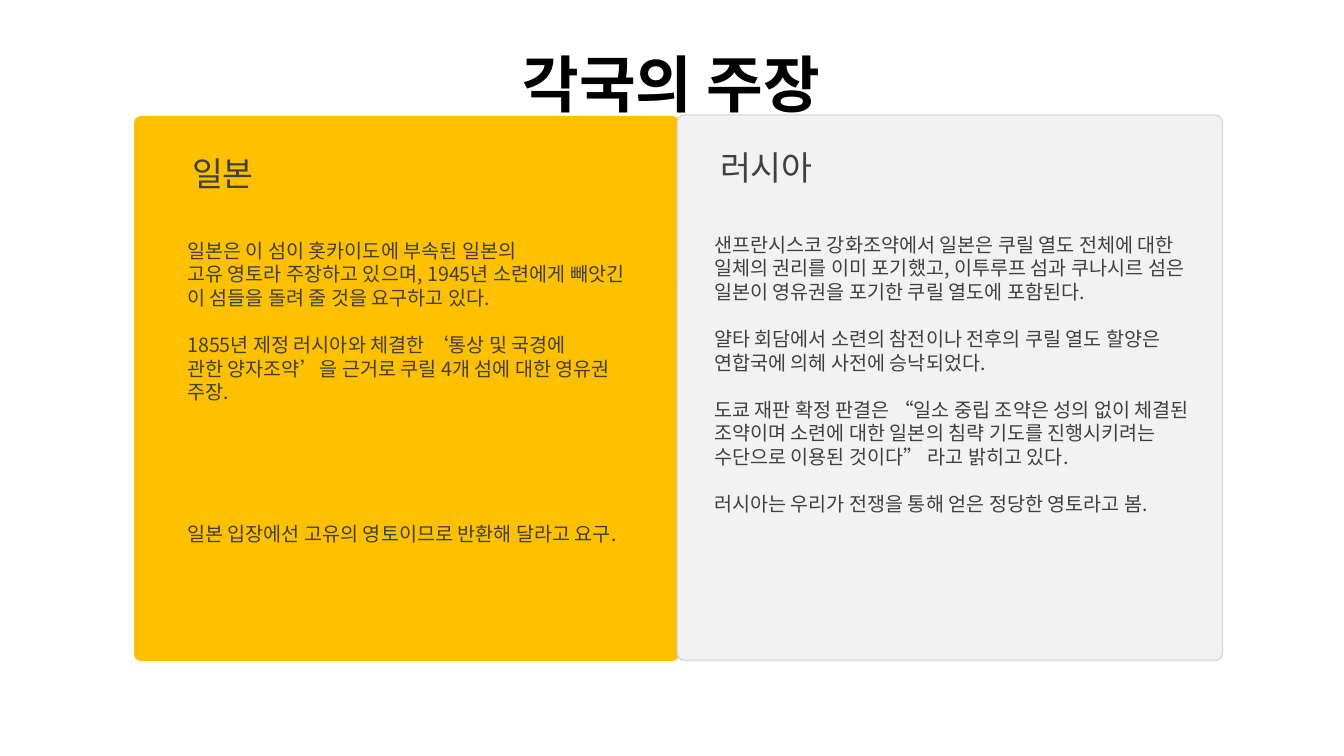
from dataclasses import dataclass
from typing import Optional

from lxml.etree import SubElement
from pptx import Presentation
from pptx.dml.color import RGBColor
from pptx.enum.shapes import MSO_SHAPE
from pptx.enum.text import MSO_AUTO_SIZE as AutoSize, PP_ALIGN as Align
from pptx.oxml.ns import qn
from pptx.slide import Slide
from pptx.util import Cm, Pt

FONT = "Noto Sans CJK KR"
TEXT_COLOR = "404040"
CARD_SIZE = 13.74
BODY_LINE = 16.9  # height of one body line in points


@dataclass
class Line:
    text: str
    gap_lines: int = 0
    align: Optional[Align] = None


@dataclass
class Box:
    left: float
    top: float
    width: float
    height: float
    lines: list[Line]
    size: int
    color: str = TEXT_COLOR
    bold: bool = False
    wrap: bool = False


@dataclass
class Card:
    left: float
    top: float
    fill: str
    border: Optional[str]
    heading: Box
    body: Box


def rgb(value: str) -> RGBColor:
    return RGBColor.from_string(value)


def centered(text: str) -> list[Line]:
    return [Line(text, align=Align.CENTER)]


def add_text(slide: Slide, box: Box) -> None:
    shape = slide.shapes.add_textbox(Cm(box.left), Cm(box.top), Cm(box.width), Cm(box.height))
    frame = shape.text_frame
    frame.text = "\n".join(line.text for line in box.lines)
    frame.word_wrap = box.wrap
    frame.auto_size = AutoSize.SHAPE_TO_FIT_TEXT
    for paragraph, line in zip(frame.paragraphs, box.lines):
        paragraph.alignment = line.align
        if line.gap_lines:
            paragraph.space_before = Pt(line.gap_lines * BODY_LINE)
        for run in paragraph.runs:
            font = run.font
            font.name = FONT
            font.size = Pt(box.size)
            font.bold = box.bold
            font.color.rgb = rgb(box.color)
            # Hangul takes the East Asian typeface
            SubElement(run._r.get_or_add_rPr(), qn("a:ea"), typeface=FONT)


def add_card(slide: Slide, card: Card) -> None:
    shape = slide.shapes.add_shape(
        MSO_SHAPE.ROUNDED_RECTANGLE, Cm(card.left), Cm(card.top), Cm(CARD_SIZE), Cm(CARD_SIZE))
    shape.adjustments[0] = 0.013
    shape.shadow.inherit = False
    shape.fill.solid()
    shape.fill.fore_color.rgb = rgb(card.fill)
    if card.border:
        shape.line.color.rgb = rgb(card.border)
        shape.line.width = Pt(1)
    else:
        shape.line.fill.background()
    add_text(slide, card.heading)
    add_text(slide, card.body)


TITLE = Box(12.47, 1.04, 8.89, 2.13, centered("각국의 주장"), 44, "000000", bold=True)

JAPAN_LINES = [
    Line("일본은 이 섬이 홋카이도에 부속된 일본의"),
    Line("고유 영토라 주장하고 있으며, 1945년 소련에게 빼앗긴", align=Align.CENTER),
    Line("이 섬들을 돌려 줄 것을 요구하고 있다."),
    Line("1855년 제정 러시아와 체결한 ‘통상 및 국경에", gap_lines=1),
    Line("관한 양자조약’을 근거로 쿠릴 4개 섬에 대한 영유권"),
    Line("주장."),
    Line("일본 입장에선 고유의 영토이므로 반환해 달라고 요구.", gap_lines=5),
]

RUSSIA_LINES = [
    Line("샌프란시스코 강화조약에서 일본은 쿠릴 열도 전체에 대한 일체의 권리를 이미 포기했고, "
         "이투루프 섬과 쿠나시르 섬은 일본이 영유권을 포기한 쿠릴 열도에 포함된다."),
    Line("얄타 회담에서 소련의 참전이나 전후의 쿠릴 열도 할양은 연합국에 의헤 사전에 승낙되었다.",
         gap_lines=1),
    Line("도쿄 재판 확정 판결은 “일소 중립 조약은 성의 없이 체결된 조약이며 소련에 대한 "
         "일본의 침략 기도를 진행시키려는 수단으로 이용된 것이다” 라고 밝히고 있다.", gap_lines=1),
    Line("러시아는 우리가 전쟁을 통해 얻은 정당한 영토라고 봄.", gap_lines=1),
]

CARDS = [
    Card(3.38, 2.92, "FFC000", None,
         Box(4.5, 3.73, 2.24, 1.27, centered("일본"), 24),
         Box(4.47, 5.89, 12.88, 8.64, JAPAN_LINES, 14)),
    Card(17.07, 2.9, "F2F2F2", "D9D9D9",
         Box(17.78, 3.58, 3.07, 1.27, centered("러시아"), 24),
         Box(17.75, 5.74, 12.57, 8.03, RUSSIA_LINES, 14, wrap=True)),
]


def main() -> None:
    presentation = Presentation()
    presentation.slide_width = Cm(33.87)
    presentation.slide_height = Cm(19.05)
    slide = presentation.slides.add_slide(presentation.slide_layouts[6])

    # Title
    add_text(slide, TITLE)

    # One card per country
    for card in CARDS:
        add_card(slide, card)

    presentation.save("out.pptx")


if __name__ == "__main__":
    main()
